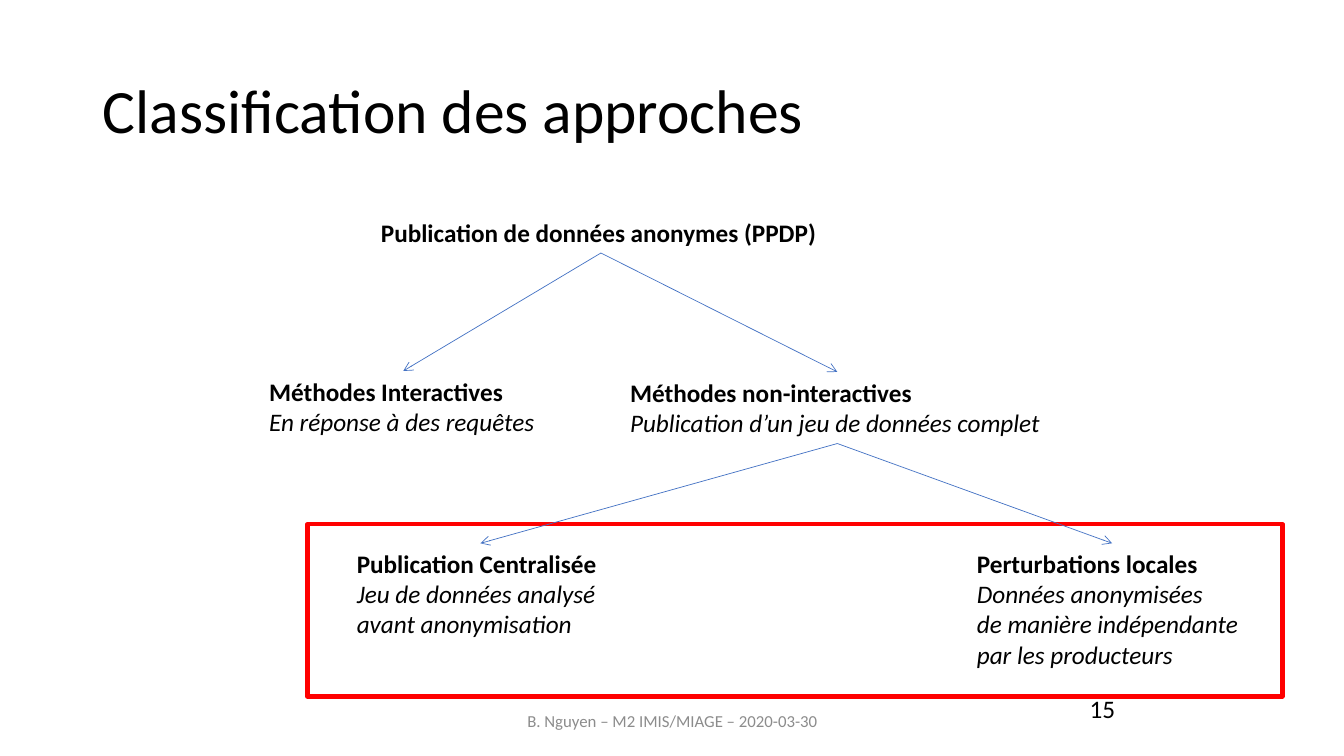
from pptx import Presentation
from pptx.dml.color import RGBColor as RGB
from pptx.enum.shapes import MSO_CONNECTOR as Conn, MSO_SHAPE as Shape
from pptx.enum.text import MSO_ANCHOR as Anchor, MSO_AUTO_SIZE as Auto, PP_ALIGN as Align
from pptx.oxml.ns import qn
from pptx.util import Inches, Pt
from lxml.etree import SubElement

# Content: name -> (left, top, width, height), heading, details
TITLE = "Classification des approches"
FOOTER = "B. Nguyen – M2 IMIS/MIAGE – 2020-03-30"
NUMBER = "15"
NODES = {
    "root": ((3.68, 2.11, 4.56, 0.4), "Publication de données anonymes (PPDP)", []),
    "inter": ((2.57, 3.68, 2.86, 0.71), "Méthodes Interactives",
              ["En réponse à des requêtes"]),
    "non": ((6.15, 3.69, 4.31, 0.71), "Méthodes non-interactives",
            ["Publication d’un jeu de données complet"]),
    "central": ((3.44, 5.39, 2.65, 1.01), "Publication Centralisée",
                ["Jeu de données analysé", "avant anonymisation"]),
    "local": ((9.59, 5.39, 2.88, 1.31), "Perturbations locales",
              ["Données anonymisées", "de manière indépendante", "par les producteurs"]),
}
LINKS = [("root", "non"), ("root", "inter"), ("non", "central"), ("non", "local")]
FOCUS = (3.05, 5.2, 9.67, 1.71)


class Theme:
    font = "Calibri"
    ink, grey = RGB(0, 0, 0), RGB(0x8C, 0x8C, 0x8C)
    blue, red = RGB(0x44, 0x72, 0xC4), RGB(0xFF, 0, 0)
    title, body, small = 44, 18, 12


def style(para, size, color=Theme.ink, bold=False, italic=False):
    for run in para.runs:
        font = run.font
        font.name, font.size, font.color.rgb = Theme.font, Pt(size), color
        font.bold, font.italic = bold, italic


def add_text(box, lines, wrap=True):
    frame = slide.shapes.add_textbox(*map(Inches, box)).text_frame
    frame.word_wrap = wrap
    frame.text = "\n".join(lines)
    return frame


def port(name):
    """Centre x, top and bottom of a node."""
    left, top, width, height = NODES[name][0]
    return left + width / 2, top, top + height


deck = Presentation()
deck.slide_width, deck.slide_height = Inches(13.33), Inches(7.5)
slide = deck.slides.add_slide(deck.slide_layouts[5])

# Red frame around the two kinds of publication
frame = slide.shapes.add_shape(Shape.RECTANGLE, *map(Inches, FOCUS))
frame.shadow.inherit = False
frame.fill.background()
frame.line.color.rgb, frame.line.width = Theme.red, Pt(3)

# Title
title = slide.shapes.title
title.left, title.top, title.width, title.height = map(Inches, (0.92, 0.4, 11.5, 1.45))
title.text_frame.text = TITLE
title.text_frame.vertical_anchor = Anchor.MIDDLE
head = title.text_frame.paragraphs[0]
head.alignment, head.line_spacing = Align.LEFT, 0.9
style(head, Theme.title)

# Page number and footer
page = add_text((8.83, 6.83, 2.33, 0.52), [NUMBER]).paragraphs[0]
page.alignment = Align.RIGHT
style(page, Theme.body)
foot = add_text((4.42, 6.95, 4.5, 0.4), [FOOTER])
foot.vertical_anchor = Anchor.MIDDLE
foot.paragraphs[0].alignment = Align.CENTER
style(foot.paragraphs[0], Theme.small, Theme.grey)

# Tree nodes: bold heading, italic details
for box, name, details in NODES.values():
    node = add_text(box, [name, *details], wrap=False)
    node.auto_size = Auto.SHAPE_TO_FIT_TEXT
    for i, para in enumerate(node.paragraphs):
        style(para, Theme.body, bold=i == 0, italic=i > 0)

# Arrows from the bottom of a parent to the top of a child
for parent, child in LINKS:
    x1, _, y1 = port(parent)
    x2, y2, _ = port(child)
    link = slide.shapes.add_connector(Conn.STRAIGHT, *map(Inches, (x1, y1, x2, y2)))
    link.line.color.rgb, link.line.width = Theme.blue, Pt(0.5)
    SubElement(link.line._get_or_add_ln(), qn("a:tailEnd"), type="arrow")
    SubElement(link._element.spPr, qn("a:effectLst"))

deck.save("out.pptx")
